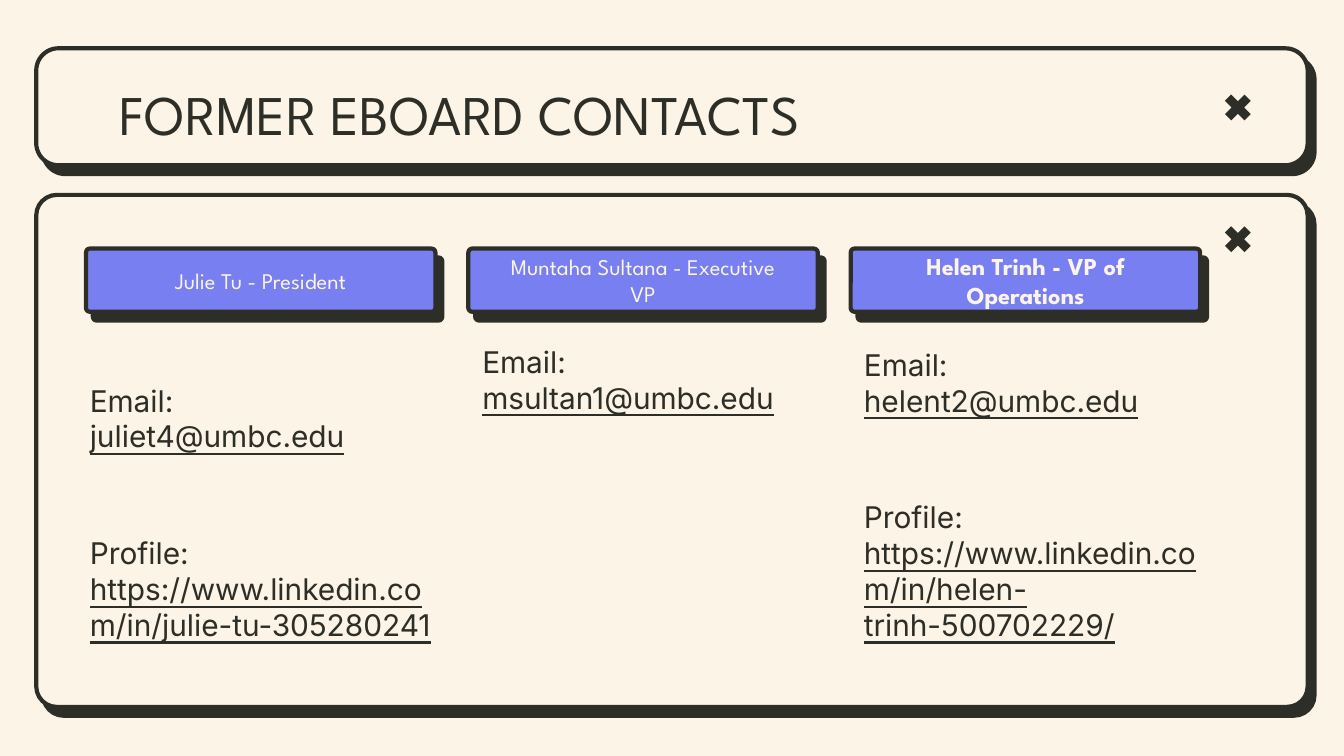
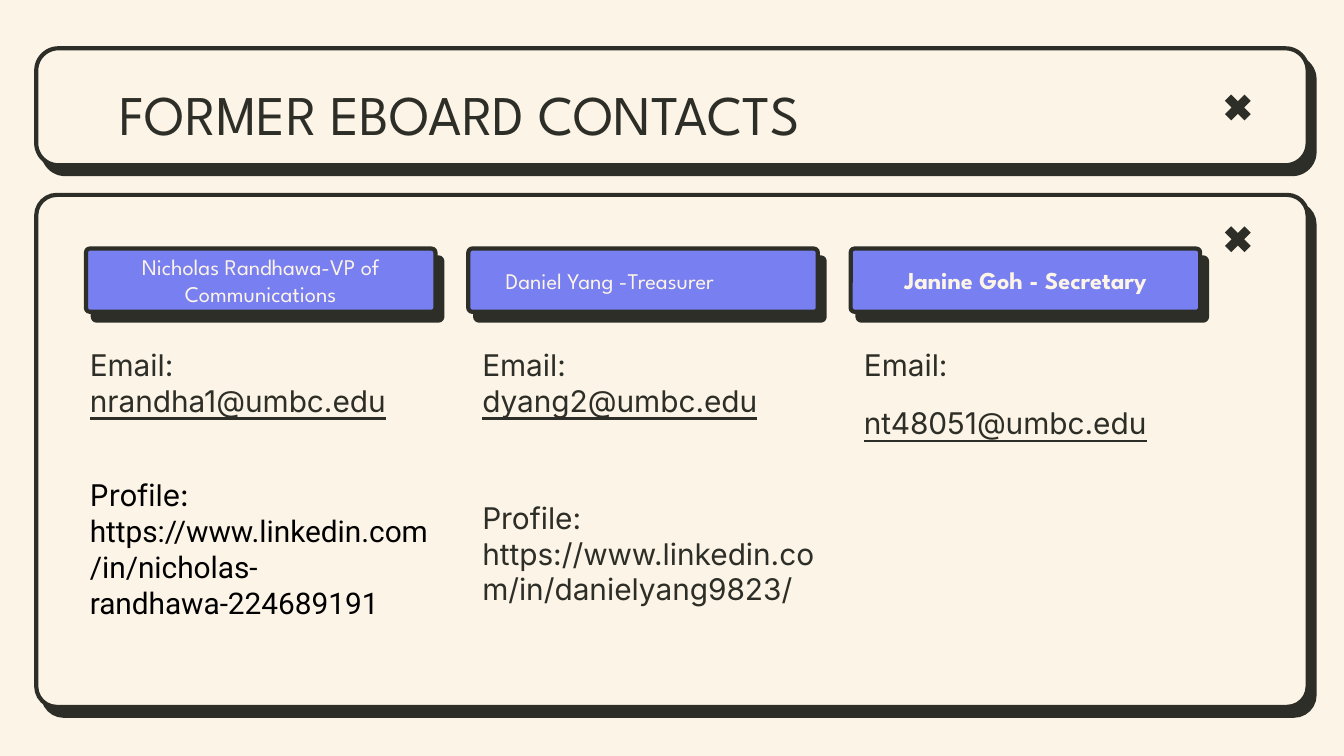
from lxml import etree
from pptx import Presentation
from pptx import util as u
from pptx.dml.color import RGBColor
from pptx.enum import shapes, text as t
from pptx.oxml.ns import qn

HUES = {"cream": "FCF4E6", "ink": "2D2E27", "violet": "787FF0", "black": "000000"}
HEAD, BODY = "League Spartan", "Inter"
LEFT, LAST = 0.64, 6.33
STEP = (LAST - LEFT) / 2
KIND = shapes.MSO_SHAPE
TOP, MID, LOW = t.MSO_ANCHOR.TOP, t.MSO_ANCHOR.MIDDLE, t.MSO_ANCHOR.BOTTOM


def hue(name):
    return RGBColor.from_string(HUES[name])


def inches(box):
    return [u.Inches(v) for v in box]


def place(shape, box):
    shape.left, shape.top, shape.width, shape.height = inches(box)


def write(shape, paras, size=16, font=BODY, color="ink", bold=False,
          align=t.PP_ALIGN.LEFT, anchor=TOP, gap=0):
    frame = shape.text_frame
    frame.word_wrap = True
    frame.auto_size = t.MSO_AUTO_SIZE.NONE
    frame.vertical_anchor = anchor
    frame.margin_left = frame.margin_right = u.Inches(0.1)
    frame.margin_top = frame.margin_bottom = u.Inches(0.1)
    for i, runs in enumerate(paras):
        para = frame.add_paragraph() if i else frame.paragraphs[0]
        para.alignment = align
        para.space_before = u.Pt(gap if i else 0)
        for words, style in runs:
            run = para.add_run()
            run.text = words
            run.font.size = u.Pt(size)
            run.font.name = style.get("font", font)
            run.font.bold = bold
            run.font.underline = style.get("line", False)
            run.font.color.rgb = hue(style.get("color", color))


def label(slide, box, paras, **style):
    write(slide.shapes.add_textbox(*inches(box)), paras, **style)


def shadow(shape):
    glow = etree.SubElement(shape._element.spPr.find(qn("a:effectLst")),
                            qn("a:outerShdw"), dist=str(u.Pt(6)),
                            dir=str(52 * 60000), algn="bl", rotWithShape="0")
    etree.SubElement(glow, qn("a:srgbClr"), val=HUES["ink"])


def draw(slide, kind, box, fill):
    shape = slide.shapes.add_shape(kind, *inches(box))
    shape.shadow.inherit = False
    shape.fill.solid()
    shape.fill.fore_color.rgb = hue(fill)
    return shape


def panel(slide, box, fill, adj):
    shape = draw(slide, KIND.ROUNDED_RECTANGLE, box, fill)
    shape.adjustments[0] = adj
    shape.line.color.rgb = hue("ink")
    shape.line.width = u.Pt(2.25)
    shadow(shape)


def cross(slide, top):
    shape = draw(slide, KIND.MATH_MULTIPLY, (9.07, top, 0.28, 0.28), "ink")
    shape.line.fill.background()


def base(deck):
    slide = deck.slides.add_slide(deck.slide_layouts[5])
    panel(slide, (0.27, 1.45, 9.46, 3.81), "cream", 0.04)
    cross(slide, 1.64)
    panel(slide, (0.27, 0.36, 9.46, 0.87), "cream", 0.19)
    cross(slide, 0.66)
    title = slide.shapes.title
    place(title, (0.79, 0.49, 8.43, 0.63))
    write(title, [[("FORMER EBOARD CONTACTS", {})]], size=30, font=HEAD)
    slide.shapes._spTree.append(title._element)
    return slide


def tag(slide, col, name, **style):
    left = LEFT + STEP * col
    panel(slide, (left, 1.85, 2.6, 0.47), "violet", 0.06)
    look = {"size": 12, "align": t.PP_ALIGN.CENTER} | style
    label(slide, (left + 0.18, 1.85, 2.24, 0.47), [[(name, {})]],
          font=HEAD, color="cream", anchor=MID, **look)


def mail(addr):
    return [("Email: ", {}), (addr, {"line": True})]


def link(url, tint="ink", **style):
    return [("Profile: ", {"color": tint}), (url, {"color": tint} | style)]


def main():
    deck = Presentation()
    deck.slide_width = u.Inches(10)
    deck.slide_height = u.Inches(10 * 9 / 16)
    back = deck.slide_master.background.fill
    back.solid()
    back.fore_color.rgb = hue("cream")
    strong = {"size": 13, "bold": True}

    first = base(deck)
    tag(first, 0, "Julie Tu - President")
    tag(first, 1, "Muntaha Sultana - Executive VP")
    tag(first, 2, "Helen Trinh - VP of Operations", **strong)
    label(first, (0.57, 2.48, 2.74, 2.4),
          [mail("juliet4@umbc.edu"),
           link("https://www.linkedin.com/in/julie-tu-305280241", line=True)],
          anchor=LOW, gap=43.4)
    label(first, (3.49, 2.56, 2.74, 0.63), [mail("msultan1@umbc.edu")], anchor=LOW)
    label(first, (6.33, 2.48, 2.74, 2.4),
          [mail("helent2@umbc.edu"),
           link("https://www.linkedin.com/in/helen-trinh-500702229/", line=True)],
          anchor=LOW, gap=43.4)

    second = base(deck)
    tag(second, 0, "Nicholas Randhawa-VP of Communications")
    tag(second, 1, "Daniel Yang -Treasurer", align=t.PP_ALIGN.LEFT)
    tag(second, 2, "Janine Goh - Secretary", **strong)
    label(second, (0.57, 2.48, 2.74, 2.26),
          [mail("nrandha1@umbc.edu"),
           link("https://www.linkedin.com/in/nicholas-randhawa-224689191",
                tint="black", font="Roboto")], gap=31.4)
    label(second, (3.49, 2.48, 2.74, 2.15),
          [mail("dyang2@umbc.edu"),
           link("https://www.linkedin.com/in/danielyang9823/")], gap=43.4)
    label(second, (6.33, 2.48, 2.83, 1.35),
          [[("Email:", {})], [("nt48051@umbc.edu", {"line": True})]], gap=12)

    deck.save("out.pptx")


if __name__ == "__main__":
    main()
